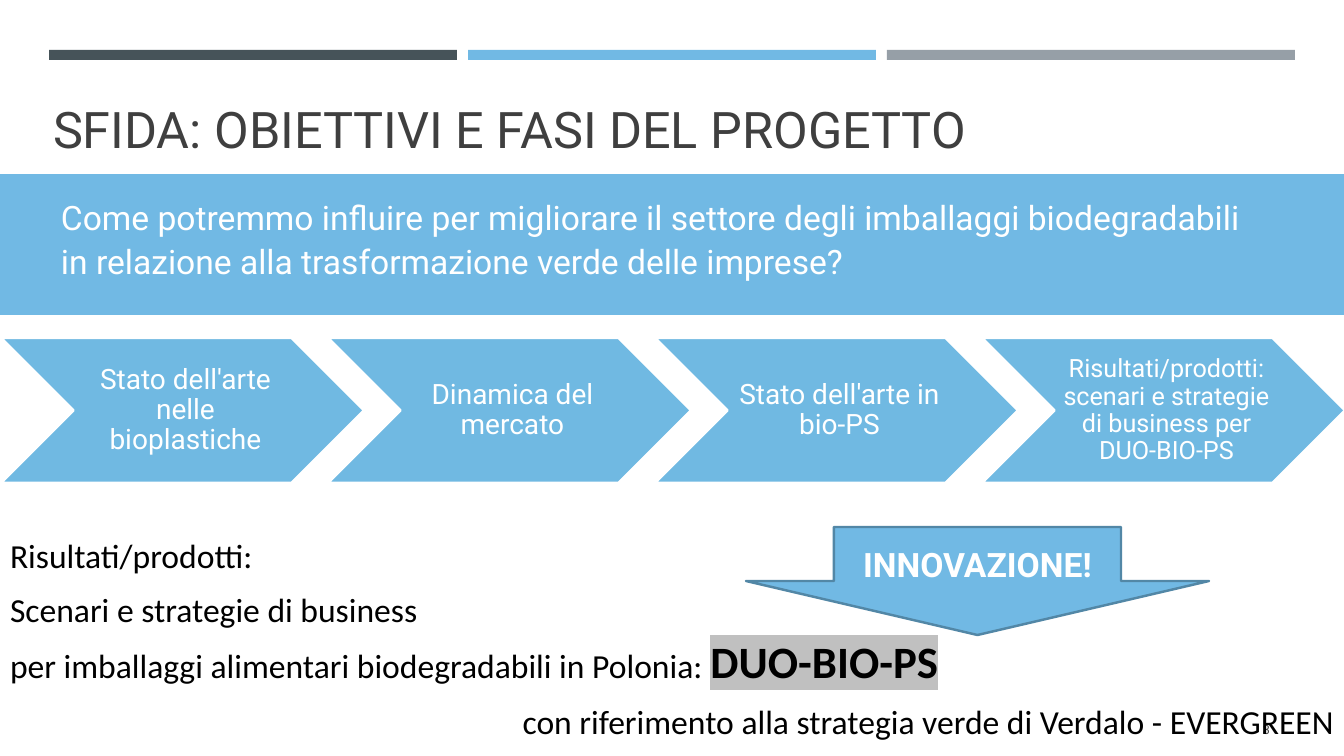
from lxml.etree import SubElement
from pptx import Presentation
from pptx.dml.color import RGBColor
from pptx.enum.shapes import MSO_SHAPE as Shape
from pptx.enum.text import MSO_ANCHOR as Anchor, MSO_AUTO_SIZE as AutoSize, PP_ALIGN as Align
from pptx.oxml.ns import qn
from pptx.util import Emu, Pt

EMU_PER_PX = 914400 / 100.8
COLORS = {
    "slate": "465359", "sky": "71B9E4", "gray": "969FA7", "step": "70B9E2",
    "edge": "5287A6", "ink": "3F3F3F", "black": "000000", "white": "FFFFFF",
    "marker": "C0C0C0",
}


def px(*lengths):
    return [Emu(round(length * EMU_PER_PX)) for length in lengths]


def rgb(color):
    return RGBColor.from_string(COLORS[color])


class SlideBuilder:
    """Holds the current slide and its text style."""

    font = "Roboto"

    def __init__(self, slide):
        self.slide = slide

    def format_run(self, run, size, color, font=None, bold=False):
        run.font.name = font or self.font
        run.font.size = Pt(size)
        run.font.bold = bold
        run.font.color.rgb = rgb(color)

    def set_text(self, shape, lines, size, color, font=None, bold=False, align=Align.LEFT,
                 anchor=Anchor.TOP, spacing=1.0, gap=0, insets=(10, 5, 10, 5)):
        """Fill a shape with one paragraph per line; gap is the space before in points."""
        frame = shape.text_frame
        frame.word_wrap = True
        frame.auto_size = AutoSize.NONE
        frame.vertical_anchor = anchor
        (frame.margin_left, frame.margin_top,
         frame.margin_right, frame.margin_bottom) = px(*insets)
        for index, line in enumerate(lines):
            paragraph = frame.add_paragraph() if index else frame.paragraphs[0]
            paragraph.text = line
            paragraph.alignment = align
            paragraph.line_spacing = spacing
            paragraph.space_before = Pt(gap if index else 0)
            for run in paragraph.runs:
                self.format_run(run, size, color, font, bold)
        return frame

    def placeholder(self, index, box, text, size, color, **style):
        holder = self.slide.placeholders[index]
        holder.left, holder.top, holder.width, holder.height = px(*box)
        self.set_text(holder, [text], size, color, **style)

    def text(self, box, lines, size, color, **style):
        return self.set_text(self.slide.shapes.add_textbox(*px(*box)), lines, size, color, **style)

    def shape(self, kind, box, fill, line=None, adjustments=()):
        shape = self.slide.shapes.add_shape(kind, *px(*box))
        shape.shadow.inherit = False
        shape.fill.solid()
        shape.fill.fore_color.rgb = rgb(fill)
        if line:
            shape.line.color.rgb = rgb(line)
            shape.line.width = Pt(1.75)
        else:
            shape.line.fill.background()
        for index, value in enumerate(adjustments):
            shape.adjustments[index] = value
        return shape

    def send_to_back(self, shape):
        # The first two children of the shape tree are its properties.
        self.slide.shapes.element.insert(2, shape.element)

    def highlight(self, run, color):
        marker = SubElement(run.font._element, qn("a:highlight"))
        SubElement(marker, qn("a:srgbClr")).set("val", COLORS[color])
        run.font._element.find(qn("a:solidFill")).addnext(marker)


def main():
    deck = Presentation()
    deck.slide_width, deck.slide_height = px(1344, 756)
    builder = SlideBuilder(deck.slides.add_slide(deck.slide_layouts[0]))

    for column, color in enumerate(("slate", "sky", "gray")):
        builder.shape(Shape.RECTANGLE, (49 + 419 * column, 50, 408, 10), color)
    question_band = builder.shape(Shape.RECTANGLE, (0, 174, 1344, 141), "sky")
    builder.send_to_back(question_band)

    builder.placeholder(0, (43, 80, 1212, 84), "SFIDA: OBIETTIVI E FASI DEL PROGETTO",
                        36, "ink", anchor=Anchor.BOTTOM)
    builder.placeholder(1, (51, 188, 1212, 114),
                        "Come potremmo influire per migliorare il settore degli imballaggi "
                        "biodegradabili in relazione alla trasformazione verde delle imprese?",
                        24, "white", spacing=1.1)
    builder.text((1164, 709, 116, 40), ["3"], 9, "ink", align=Align.RIGHT, anchor=Anchor.MIDDLE)

    results = builder.text(
        (0, 527, 1344, 231),
        ["Risultati/prodotti:",
         "Scenari e strategie di business\vper imballaggi alimentari biodegradabili in Polonia: ",
         "con riferimento alla strategia verde di Verdalo - EVERGREEN"],
        24, "black", font="Calibri", spacing=1.07, gap=8)
    scenarios, reference = results.paragraphs[1:]
    reference.alignment = Align.RIGHT
    product = scenarios.add_run()
    product.text = "DUO-BIO-PS"
    builder.format_run(product, 32, "black", font="Calibri", bold=True)
    builder.highlight(product, "marker")

    phases = (
        ("Stato dell'arte nelle bioplastiche", 20),
        ("Dinamica del mercato", 20),
        ("Stato dell'arte in bio-PS", 20),
        ("Risultati/prodotti: scenari e strategie di business per DUO-BIO-PS", 18),
    )
    for step, (phase, size) in enumerate(phases):
        chevron = builder.shape(Shape.CHEVRON, (1 + 327 * step, 338, 363, 145),
                                "step", "white", (0.5,))
        builder.set_text(chevron, [phase], size, "white", align=Align.CENTER,
                         anchor=Anchor.MIDDLE, spacing=0.9, insets=(9, 3, 3, 3))

    innovation = builder.shape(Shape.DOWN_ARROW, (746, 527, 463, 108), "sky", "edge", (0.62, 0.5))
    builder.set_text(innovation, ["INNOVAZIONE!"], 24, "white", bold=True,
                     align=Align.CENTER, anchor=Anchor.MIDDLE)

    deck.save("out.pptx")


if __name__ == "__main__":
    main()
